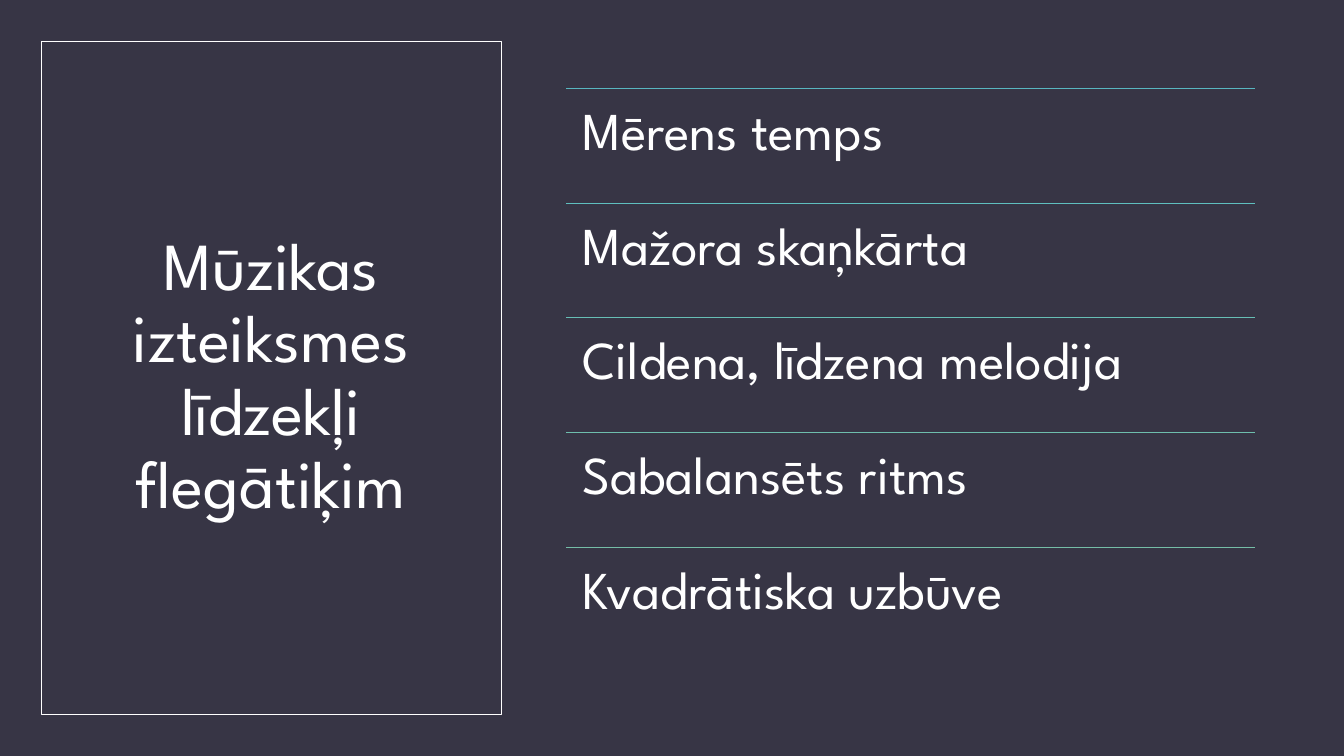
"""Build a slide listing the musical means of expression for the phlegmatic."""
import lxml.etree
import pptx
import pptx.dml.color
import pptx.enum.shapes
import pptx.enum.text
import pptx.oxml
import pptx.oxml.ns
import pptx.util

Pt = pptx.util.Pt
FONT = "League Spartan"
WHITE = "FFFFFF"
BACKGROUND = "373545"
FEATURES = [
    ("Mērens temps", "58B6C0"),
    ("Mažora skaņkārta", "5FBFBF"),
    ("Cildena, līdzena melodija", "67BEB5"),
    ("Sabalansēts ritms", "6EBEAD"),
    ("Kvadrātiska uzbūve", "75BDA7"),
]
LIST_LEFT, LIST_TOP, LIST_WIDTH, ROW_HEIGHT = 404.6, 63.2, 491.8, 81.9
RULE_SHADOW = (
    f'<a:effectLst {pptx.oxml.ns.nsdecls("a")}>'
    '<a:outerShdw blurRad="38100" dist="12700" dir="5400000" rotWithShape="0">'
    '<a:srgbClr val="000000"><a:alpha val="63000"/></a:srgbClr>'
    "</a:outerShdw></a:effectLst>"
)


def paint(color_format, hex_color):
    """Give a fill, line or font colour its hex value."""
    color_format.rgb = pptx.dml.color.RGBColor.from_string(hex_color)


def style_text(frame, size, alignment, anchor):
    """Format the only paragraph of a text frame."""
    frame.word_wrap = True
    frame.auto_size = pptx.enum.text.MSO_AUTO_SIZE.NONE
    frame.vertical_anchor = anchor
    paragraph = frame.paragraphs[0]
    paragraph.alignment = alignment
    paragraph.line_spacing = 0.9
    font = paragraph.runs[0].font
    font.name = FONT
    font.size = Pt(size)
    paint(font.color, WHITE)


def set_title(slide, wording):
    """Place and format the title placeholder."""
    title = slide.shapes.title
    title.left, title.top, title.width, title.height = Pt(45.4), Pt(54), Pt(296.6), Pt(431.3)
    title.text_frame.text = wording
    style_text(title.text_frame, 48, pptx.enum.text.PP_ALIGN.CENTER,
               pptx.enum.text.MSO_ANCHOR.MIDDLE)


def add_title_frame(slide):
    """Draw the thin outline around the title."""
    frame = slide.shapes.add_shape(pptx.enum.shapes.MSO_SHAPE.RECTANGLE,
                                   Pt(29.5), Pt(29.5), Pt(329), Pt(481))
    frame.shadow.inherit = False
    frame.fill.background()
    paint(frame.line.color, WHITE)
    frame.line.width = Pt(0.5)


def add_rule(slide, top, hex_color):
    """Draw the shadowed line above a feature."""
    rule = slide.shapes.add_connector(pptx.enum.shapes.MSO_CONNECTOR.STRAIGHT,
                                      Pt(LIST_LEFT), Pt(top),
                                      Pt(LIST_LEFT + LIST_WIDTH), Pt(top))
    paint(rule.line.color, hex_color)
    rule.line.width = Pt(0.5)
    rule._element.spPr.append(pptx.oxml.parse_xml(RULE_SHADOW))


def add_feature(slide, top, wording):
    """Write one feature below its rule."""
    feature = slide.shapes.add_textbox(Pt(LIST_LEFT), Pt(top), Pt(LIST_WIDTH), Pt(ROW_HEIGHT))
    frame = feature.text_frame
    frame.margin_left = frame.margin_right = Pt(11.4)
    frame.margin_top = frame.margin_bottom = Pt(11.4)
    frame.text = wording
    style_text(frame, 38, pptx.enum.text.PP_ALIGN.LEFT, pptx.enum.text.MSO_ANCHOR.TOP)


def main():
    """Build and save the presentation."""
    presentation = pptx.Presentation()
    presentation.slide_width, presentation.slide_height = Pt(960), Pt(540)
    slide = presentation.slides.add_slide(presentation.slide_layouts[5])
    slide.background.fill.solid()
    paint(slide.background.fill.fore_color, BACKGROUND)
    set_title(slide, "Mūzikas izteiksmes līdzekļi flegātiķim")
    add_title_frame(slide)
    for row, (wording, rule_color) in enumerate(FEATURES):
        top = LIST_TOP + row * ROW_HEIGHT
        add_rule(slide, top, rule_color)
        add_feature(slide, top, wording)
    presentation.save("out.pptx")


if __name__ == "__main__":
    main()
